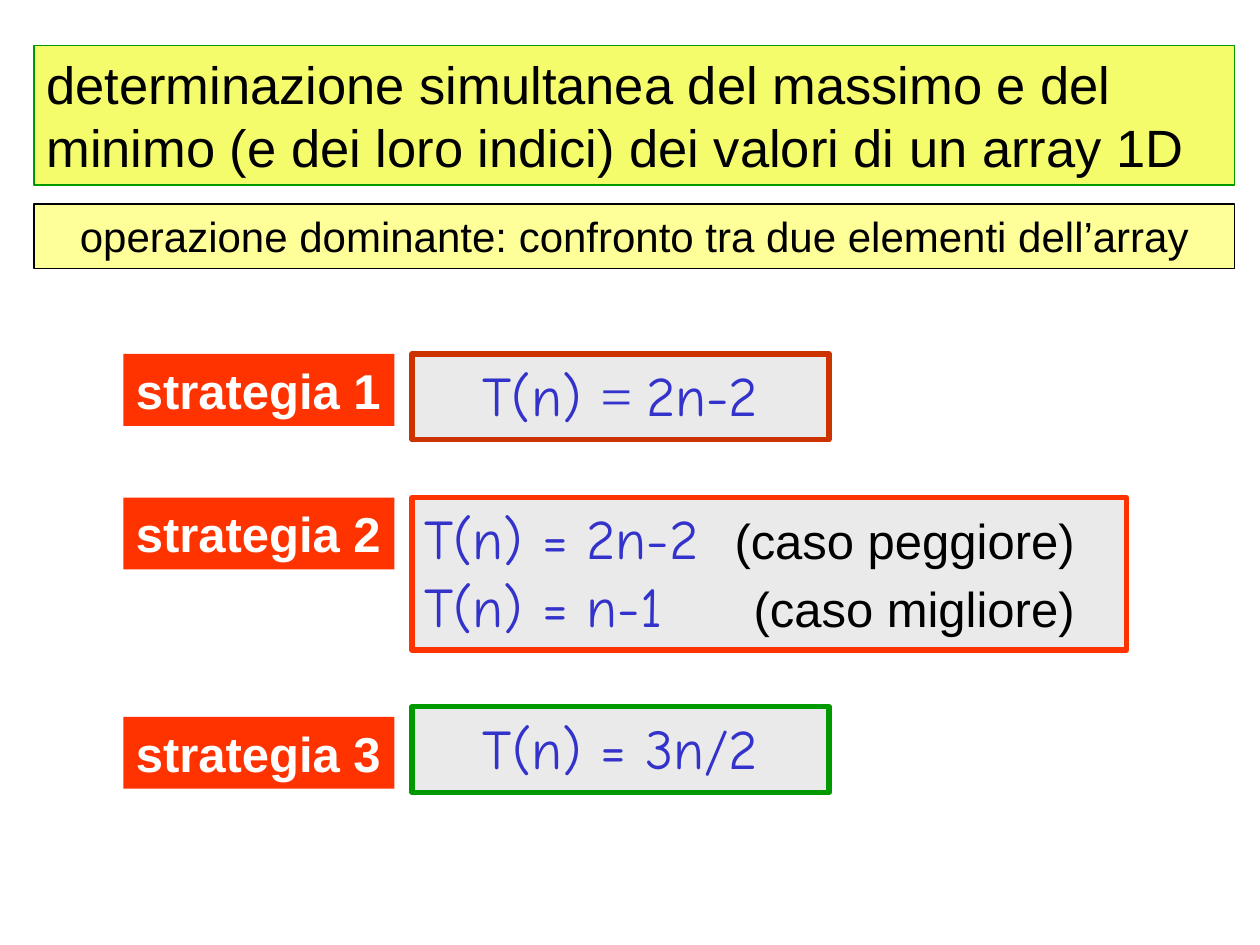
from dataclasses import dataclass
from typing import Optional

from lxml import etree
from pptx import Presentation
from pptx.dml.color import RGBColor
from pptx.enum import text
from pptx.oxml import ns
from pptx.util import Inches, Pt

COLORS = {
    "title": "F5FC6C",
    "note": "FFFF99",
    "label": "FF3300",
    "result": "EAEAEA",
    "formula": "3333CC",
    "rust": "CC3300",
    "green": "009900",
    "black": "000000",
    "white": "FFFFFF",
}
LEFT, CENTER = text.PP_ALIGN.LEFT, text.PP_ALIGN.CENTER


@dataclass(frozen=True)
class Style:
    size: float
    name: str = "Arial"
    color: str = "black"
    bold: bool = False


TITLE = Style(30)
NOTE = Style(24)
LABEL = Style(28, color="white", bold=True)
FORMULA = Style(32, "Comic Neue", "formula")
EQUALS = Style(32, "Times New Roman", "formula")
CASE = Style(28)


@dataclass(frozen=True)
class Run:
    words: str
    style: Style


@dataclass(frozen=True)
class Box:
    left: float
    top: float
    width: float
    height: float
    fill: str
    lines: list[list[Run]]
    border: Optional[str] = None
    weight: float = 0.75
    align: text.PP_ALIGN = LEFT
    wrap: bool = True
    right_tab: Optional[float] = None


@dataclass(frozen=True)
class Strategy:
    label_top: float
    top: float
    width: float
    height: float
    border: str
    lines: list[list[Run]]
    align: text.PP_ALIGN = CENTER
    right_tab: Optional[float] = None


STRATEGIES = [
    Strategy(2.81, 2.81, 3.31, 0.68, "rust",
             [[Run("T(n) ", FORMULA), Run("= ", EQUALS), Run("2n-2", FORMULA)]]),
    Strategy(3.95, 3.95, 5.67, 1.21, "label",
             [[Run("T(n) = 2n-2", FORMULA), Run("\t(caso peggiore)", CASE)],
              [Run("T(n) = n-1", FORMULA), Run("\t(caso migliore)", CASE)]],
             LEFT, 5.16),
    Strategy(5.69, 5.61, 3.31, 0.68, "green", [[Run("T(n) = 3n/2", FORMULA)]]),
]


def rgb(key: str) -> RGBColor:
    return RGBColor.from_string(COLORS[key])


def set_font(font, style: Style) -> None:
    font.size = Pt(style.size)
    font.name = style.name
    font.bold = style.bold
    font.color.rgb = rgb(style.color)


def add_right_tab(p, position: float) -> None:
    tabs = etree.SubElement(p._p.get_or_add_pPr(), ns.qn("a:tabLst"))
    etree.SubElement(tabs, ns.qn("a:tab"), pos=str(Inches(position)), algn="r")


def draw_box(s, box: Box) -> None:
    sp = s.shapes.add_textbox(Inches(box.left), Inches(box.top),
                              Inches(box.width), Inches(box.height))
    sp.fill.solid()
    sp.fill.fore_color.rgb = rgb(box.fill)
    if box.border:
        sp.line.color.rgb = rgb(box.border)
        sp.line.width = Pt(box.weight)
    tf = sp.text_frame
    tf.word_wrap = box.wrap
    tf.auto_size = text.MSO_AUTO_SIZE.SHAPE_TO_FIT_TEXT
    for i, line in enumerate(box.lines):
        p = tf.add_paragraph() if i else tf.paragraphs[0]
        p.alignment = box.align
        if box.right_tab:
            add_right_tab(p, box.right_tab)
        uniform = len({run.style for run in line}) == 1
        if uniform:
            set_font(p.font, line[0].style)
        for run in line:
            r = p.add_run()
            r.text = run.words
            if not uniform:
                set_font(r.font, run.style)


def draw_strategy(s, number: int, item: Strategy) -> None:
    draw_box(s, Box(0.98, item.label_top, 2.15, 0.57, "label",
                    [[Run(f"strategia {number}", LABEL)]], wrap=False))
    draw_box(s, Box(3.27, item.top, item.width, item.height, "result", item.lines,
                    item.border, 3, item.align, right_tab=item.right_tab))


def main() -> None:
    prs = Presentation()
    prs.slide_width, prs.slide_height = Inches(10), Inches(7.5)
    s = prs.slides.add_slide(prs.slide_layouts[6])
    draw_box(s, Box(0.27, 0.36, 9.53, 1.11, "title", [[Run(
        "determinazione simultanea del massimo e del minimo "
        "(e dei loro indici) dei valori di un array 1D", TITLE)]], "green"))
    draw_box(s, Box(0.27, 1.62, 9.53, 0.51, "note", [[Run(
        "operazione dominante: confronto tra due elementi dell’array", NOTE)]],
        "black", align=CENTER))
    for number, item in enumerate(STRATEGIES, 1):
        draw_strategy(s, number, item)
    prs.save("out.pptx")


if __name__ == "__main__":
    main()
